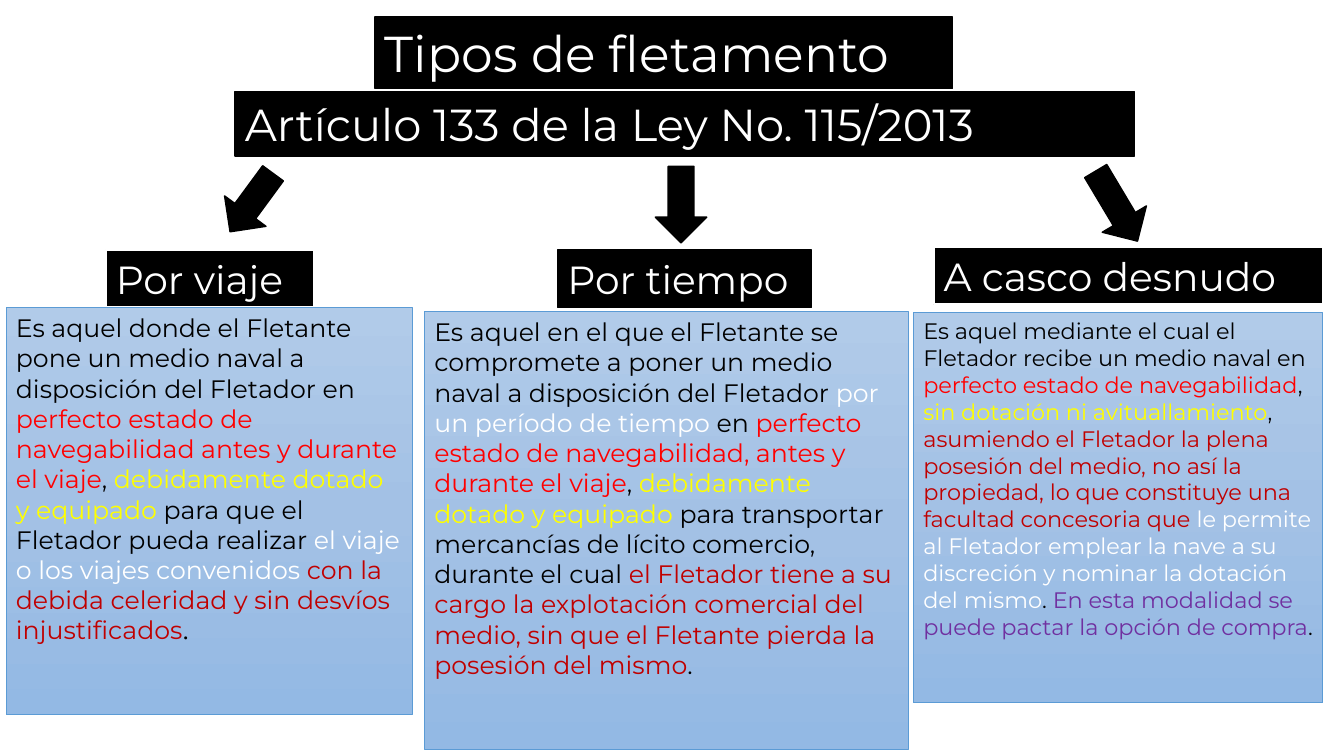
from copy import deepcopy

from pptx import Presentation
from pptx.dml.color import RGBColor
from pptx.enum.shapes import MSO_SHAPE as SHAPE
from pptx.enum.text import MSO_ANCHOR as ANCHOR, PP_ALIGN as ALIGN
from pptx.oxml.ns import qn
from pptx.util import Inches, Pt

BLACK = RGBColor(0x00, 0x00, 0x00)
WHITE = RGBColor(0xFF, 0xFF, 0xFF)
RED = RGBColor(0xFF, 0x00, 0x00)
DARK_RED = RGBColor(0xC0, 0x00, 0x00)
YELLOW = RGBColor(0xFF, 0xFF, 0x00)
PURPLE = RGBColor(0x70, 0x30, 0xA0)
PANEL_LINE = RGBColor(0x5B, 0x9B, 0xD5)
PANEL_STOPS = [
    (0, RGBColor(0xB1, 0xCB, 0xE9)),
    (0.5, RGBColor(0xA3, 0xC1, 0xE5)),
    (1, RGBColor(0x93, 0xB9, 0xE4)),
]
FONT = "Montserrat"
STOP_FONT = "Times New Roman"

BANNERS = [
    ("Tipos de fletamento", 36, (3.72, 0.17, 5.73, 0.71)),
    ("Artículo 133 de la Ley No. 115/2013", 32, (2.33, 0.91, 8.92, 0.64)),
]

COLUMNS = [
    {
        "arrow": ((2.24, 1.65, 0.51, 0.72), 36.3),
        "heading": ("Por viaje", (1.05, 2.48, 2.07, 0.57), WHITE, 1.5),
        "panel": (0.06, 3.05, 4.03, 4.04),
        "size": 18,
        "runs": [
            ("Es aquel donde el Fletante pone un medio naval a disposición "
             "del Fletador en ", BLACK),
            ("perfecto estado de navegabilidad antes y durante el viaje", RED),
            (", ", BLACK),
            ("debidamente dotado y equipado ", YELLOW),
            ("para que el Fletador pueda realizar ", BLACK),
            ("el viaje o los viajes convenidos ", WHITE),
            ("con la debida celeridad y sin desvíos injustificados", DARK_RED),
            (".", BLACK, STOP_FONT),
        ],
    },
    {
        "arrow": ((6.5, 1.65, 0.51, 0.76), 0),
        "heading": ("Por tiempo", (5.53, 2.48, 2.52, 0.57), BLACK, 1),
        "panel": (4.21, 3.09, 4.8, 4.34),
        "size": 18,
        "runs": [
            ("Es aquel en el que el Fletante se compromete a poner un medio "
             "naval a disposición del Fletador ", BLACK),
            ("por un período de tiempo ", WHITE),
            ("en ", BLACK),
            ("perfecto estado de navegabilidad, antes y durante el viaje", RED),
            (", ", BLACK),
            ("debidamente dotado y equipado ", YELLOW),
            ("para transportar mercancías de lícito comercio, durante el "
             "cual ", BLACK),
            ("el Fletador tiene a su cargo la explotación comercial del medio, "
             "sin que el Fletante pierda la posesión del mismo", DARK_RED),
            (".", BLACK),
        ],
    },
    {
        "arrow": ((10.82, 1.64, 0.51, 0.81), 329.2),
        "heading": ("A casco desnudo", (9.26, 2.45, 3.86, 0.57), WHITE, 1.5),
        "panel": (9.06, 3.1, 4.06, 3.87),
        "size": 16,
        "runs": [
            ("Es aquel mediante el cual el Fletador recibe un medio naval "
             "en ", BLACK),
            ("perfecto estado de navegabilidad", RED),
            (", ", BLACK),
            ("sin dotación ni avituallamiento", YELLOW),
            (", ", BLACK),
            ("asumiendo el Fletador la plena posesión del medio, no así la "
             "propiedad, lo que constituye una facultad concesoria que ",
             DARK_RED),
            ("le permite al Fletador emplear la nave a su discreción y nominar "
             "la dotación del mismo", WHITE),
            (". ", BLACK),
            ("En esta modalidad se puede pactar la opción de compra", PURPLE),
            (".", BLACK),
        ],
    },
]


def add_box(slide, box, line_color=BLACK, line_width=1, kind=SHAPE.RECTANGLE):
    """Add a black preset shape with the given outline."""
    shape = slide.shapes.add_shape(kind, *(Inches(length) for length in box))
    shape.shadow.inherit = False
    shape.fill.solid()
    shape.fill.fore_color.rgb = BLACK
    shape.line.color.rgb = line_color
    shape.line.width = Pt(line_width)
    return shape


def write_runs(shape, runs, size):
    """Write coloured runs as one left-aligned paragraph at the top of a shape."""
    frame = shape.text_frame
    for name, value in {"word_wrap": True, "vertical_anchor": ANCHOR.TOP}.items():
        setattr(frame, name, value)
    paragraph = frame.paragraphs[0]
    paragraph.alignment = ALIGN.LEFT
    for text, color, *fonts in runs:
        run = paragraph.add_run()
        run.text = text
        run.font.color.rgb = color
        font_format = {"name": fonts[0] if fonts else FONT, "size": Pt(size)}
        for name, value in font_format.items():
            setattr(run.font, name, value)


def apply_gradient(shape):
    """Fill a panel with the three-stop vertical gradient."""
    shape.fill.gradient()
    shape.fill.gradient_angle = 270
    stop_list = next(shape.fill._xPr.iter(qn("a:gsLst")))
    stop_list.insert(1, deepcopy(stop_list[0]))
    for stop, (position, color) in zip(shape.fill.gradient_stops, PANEL_STOPS):
        stop.position = position
        stop.color.rgb = color


def add_label(slide, text, size, box, line_color=BLACK, line_width=1):
    """Add a black label with white text."""
    shape = add_box(slide, box, line_color, line_width)
    write_runs(shape, [(text, WHITE)], size)


def add_column(slide, column):
    """Add the arrow, heading and description of one charter type."""
    arrow_box, rotation = column["arrow"]
    arrow = add_box(slide, arrow_box, kind=SHAPE.DOWN_ARROW)
    arrow.rotation = rotation
    text, box, line_color, line_width = column["heading"]
    add_label(slide, text, 28, box, line_color, line_width)
    panel = add_box(slide, column["panel"], PANEL_LINE, 0.5)
    apply_gradient(panel)
    write_runs(panel, column["runs"], column["size"])


def main():
    """Build the slide on charter types and save it."""
    presentation = Presentation()
    presentation.slide_width = Inches(13.33)
    presentation.slide_height = Inches(7.5)
    slide = presentation.slides.add_slide(presentation.slide_layouts[6])
    for text, size, box in BANNERS:
        add_label(slide, text, size, box)
    for column in COLUMNS:
        add_column(slide, column)
    presentation.save("out.pptx")


if __name__ == "__main__":
    main()
